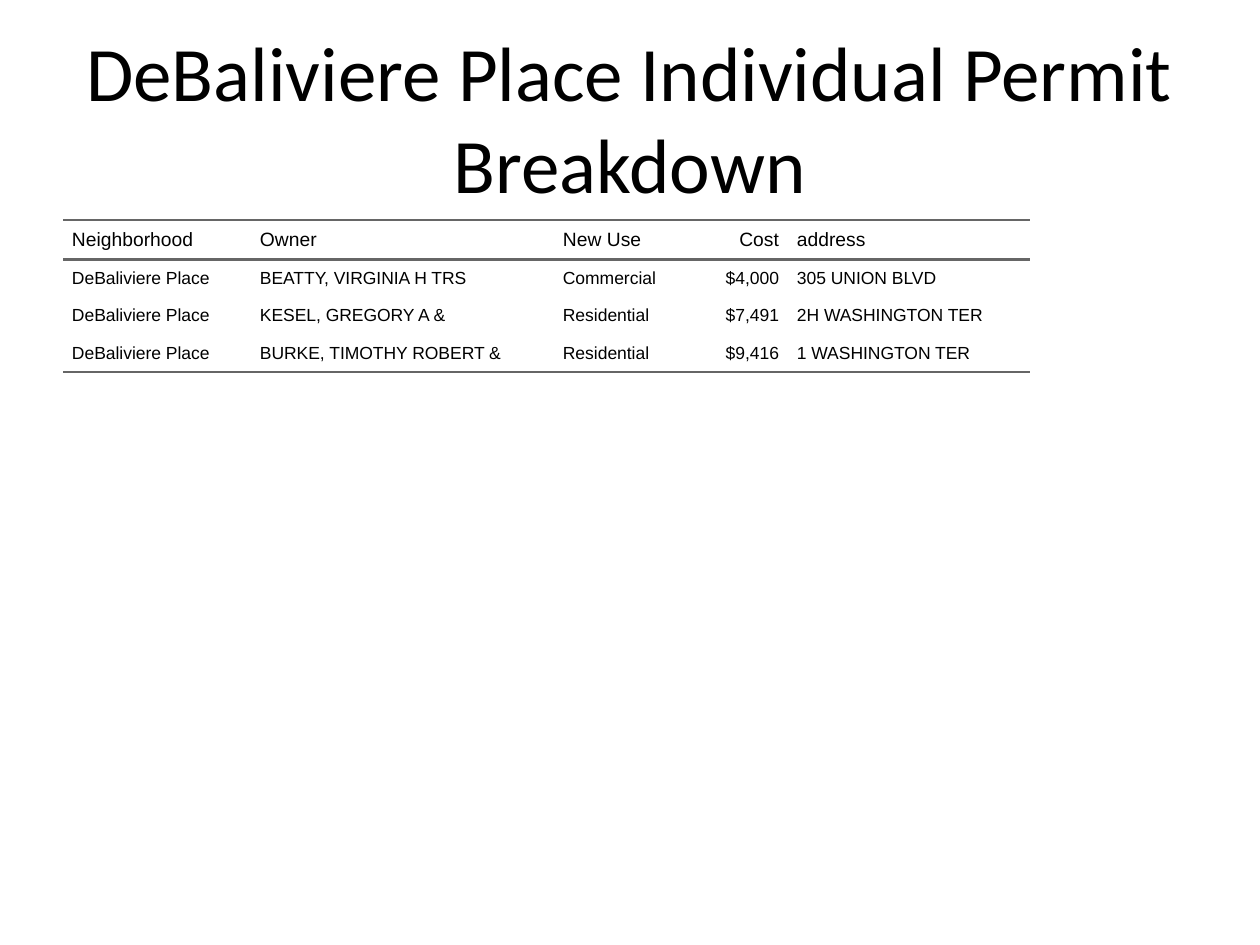
from pptx import Presentation
from pptx.dml.color import RGBColor
from pptx.enum.text import MSO_ANCHOR as Anchor, PP_ALIGN as Align
from pptx.oxml import parse_xml
from pptx.oxml.ns import nsdecls
from pptx.util import Emu, Pt

TITLE = "DeBaliviere Place Individual Permit Breakdown"
HEAD = ("Neighborhood", "Owner", "New Use", "Cost", "address")
PERMITS = [
    ("DeBaliviere Place", "BEATTY, VIRGINIA H TRS", "Commercial", "$4,000", "305 UNION BLVD"),
    ("DeBaliviere Place", "KESEL, GREGORY A &", "Residential", "$7,491", "2H WASHINGTON TER"),
    ("DeBaliviere Place", "BURKE, TIMOTHY ROBERT &", "Residential", "$9,416", "1 WASHINGTON TER"),
]
WIDTHS = (188, 303, 139, 95, 242)
ROW_H, PAD = 32, 9
TITLE_BOX = (63, 38, 1134, 158)
TABLE_BOX = (63, 220, 1134, 624)

BLACK = RGBColor(0, 0, 0)
RULE = RGBColor(0x66, 0x66, 0x66)
NO_STYLE = "{2D5ABB26-0587-4C30-8999-92F81FD0307C}"


def px(n):
    return Emu(round(n * 914400 / 126))


def set_font(font, name, size):
    font.name, font.size = name, Pt(size)
    font.color.rgb = BLACK


def add_rule(cell, side):
    """Draw a border on the top ("T") or bottom ("B") of a cell."""
    cell._tc.get_or_add_tcPr().append(parse_xml(
        f'<a:ln{side} {nsdecls("a")} w="{Pt(1.5)}"><a:solidFill>'
        f'<a:srgbClr val="{RULE}"/></a:solidFill></a:ln{side}>'))


def fill_cell(cell, text, size, align):
    cell.text = text
    cell.vertical_anchor = Anchor.MIDDLE
    cell.margin_left = cell.margin_right = 0
    cell.margin_top = cell.margin_bottom = px(PAD)
    para = cell.text_frame.paragraphs[0]
    para.alignment = align
    para.space_before = para.space_after = Pt(5)
    set_font(para.font, "Arial", size)
    props = para._p.get_or_add_pPr()
    for key in ("marL", "marR"):
        props.set(key, str(px(PAD)))
    props.set("indent", "0")


def add_permits(slide):
    rows = [HEAD] + PERMITS
    frame = slide.shapes.add_table(len(rows), len(HEAD), *map(px, TABLE_BOX))
    table = frame.table
    table.horz_banding = table.first_row = False
    table._tbl.tblPr.find("{*}tableStyleId").text = NO_STYLE
    for col, width in zip(table.columns, WIDTHS):
        col.width = px(width)
    for r, row in enumerate(rows):
        table.rows[r].height = px(ROW_H)
        for c, text in enumerate(row):
            cell = table.cell(r, c)
            align = Align.RIGHT if HEAD[c] == "Cost" else Align.LEFT
            fill_cell(cell, text, 11 if r == 0 else 10, align)
            if r == 0:
                add_rule(cell, "T")
            if r in (0, len(rows) - 1):
                add_rule(cell, "B")
    frame.width, frame.height = map(px, TABLE_BOX[2:])


def main():
    deck = Presentation()
    deck.slide_width, deck.slide_height = px(1260), px(945)
    slide = deck.slides.add_slide(deck.slide_layouts[5])
    title = slide.shapes.title
    title.left, title.top, title.width, title.height = map(px, TITLE_BOX)
    title.text_frame.text = TITLE
    title.text_frame.vertical_anchor = Anchor.MIDDLE
    para = title.text_frame.paragraphs[0]
    para.alignment = Align.CENTER
    set_font(para.font, "Calibri", 44)
    add_permits(slide)
    deck.save("out.pptx")


if __name__ == "__main__":
    main()
